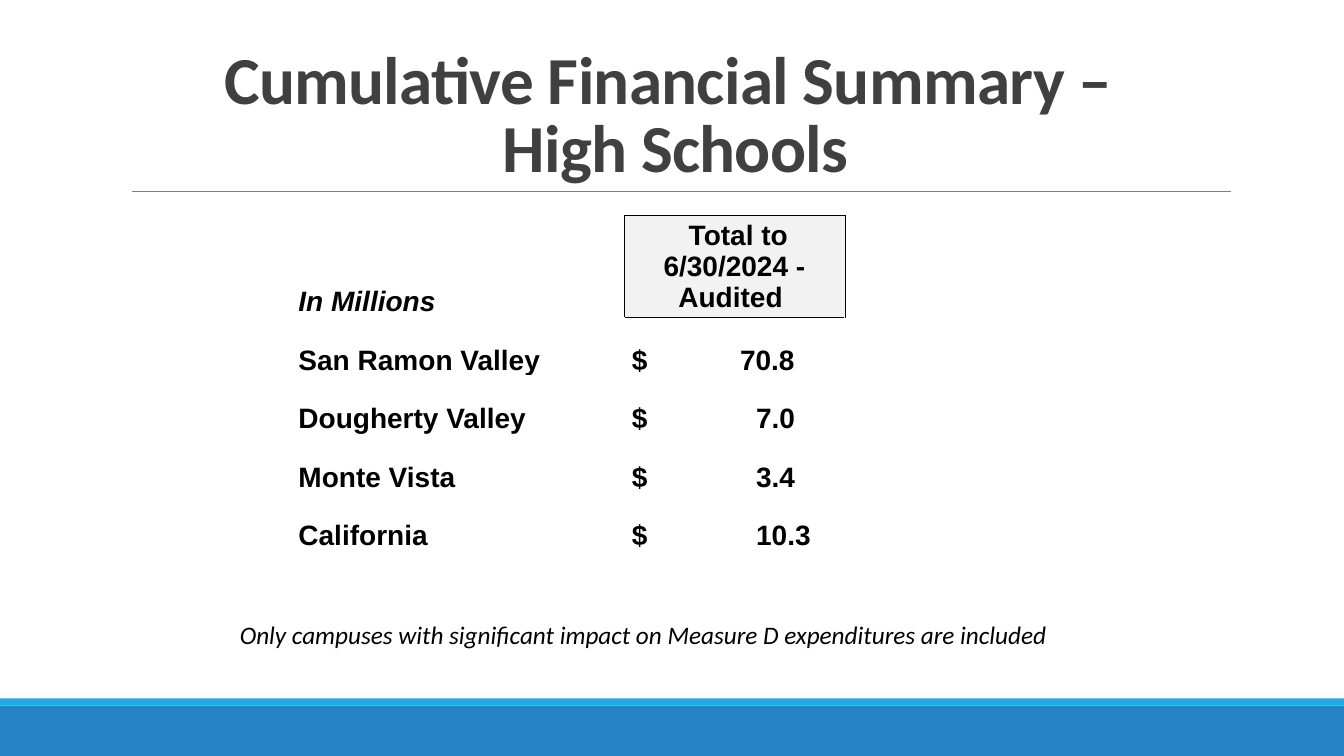
from lxml.etree import SubElement
from pptx import Presentation
from pptx.dml.color import RGBColor
from pptx.enum.shapes import MSO_CONNECTOR, MSO_SHAPE
from pptx.enum.text import MSO_ANCHOR, PP_ALIGN
from pptx.oxml import parse_xml
from pptx.oxml.ns import nsdecls, qn
from pptx.util import Inches, Pt

SCHOOLS = [
    ("San Ramon Valley", "70.8", 1.15),
    ("Dougherty Valley", "7.0", 1.31),
    ("Monte Vista", "3.4", 1.31),
    ("California", "10.3", 1.31),
]


def tint(code):
    return RGBColor.from_string(code)


def write(frame, text, size=20, font="Arial", color="000000", bold=False,
          italic=False, align=PP_ALIGN.LEFT, anchor=MSO_ANCHOR.BOTTOM):
    frame.word_wrap = True
    frame.vertical_anchor = anchor
    frame.text = text
    para = frame.paragraphs[0]
    para.alignment = align
    for run in para.runs:
        run.font.size = Pt(size)
        run.font.name = font
        run.font.color.rgb = tint(color)
        run.font.bold = bold
        run.font.italic = italic
    return para


def add_bar(slide, top, height, color):
    bar = slide.shapes.add_shape(MSO_SHAPE.RECTANGLE, Inches(0), Inches(top),
                                 Inches(13.33), Inches(height))
    bar.shadow.inherit = False
    bar.fill.solid()
    bar.fill.fore_color.rgb = tint(color)
    bar.line.fill.background()


def add_rule(slide, left, right, top):
    rule = slide.shapes.add_connector(MSO_CONNECTOR.STRAIGHT, Inches(left), Inches(top),
                                      Inches(right), Inches(top))
    rule.line.color.rgb = tint("808080")
    rule.line.width = Pt(0.5)
    SubElement(rule._element.spPr, qn("a:effectLst"))


def set_title(slide, text):
    title = slide.shapes.title
    title.left, title.top = Inches(1.2), Inches(0.31)
    title.width, title.height = Inches(11), Inches(1.59)
    para = write(title.text_frame, text, size=48, font="Calibri", color="404040",
                 bold=True, align=PP_ALIGN.CENTER)
    para.line_spacing = 0.85
    for run in para.runs:
        run.font._element.set("spc", "-50")


def add_note(slide, text):
    box = slide.shapes.add_textbox(Inches(2.28), Inches(6.09), Inches(8.45), Inches(0.4))
    write(box.text_frame, text, size=18, font="Calibri", italic=True,
          anchor=MSO_ANCHOR.TOP)


def set_edges(cell, sides):
    props = cell._tc.get_or_add_tcPr()
    for spot, side in enumerate(sides):
        props.insert(spot, parse_xml(
            f'<a:ln{side} {nsdecls("a")} w="6350"><a:solidFill>'
            f'<a:srgbClr val="000000"/></a:solidFill></a:ln{side}>'))


def set_tab(para, stop):
    tabs = SubElement(para._p.get_or_add_pPr(), qn("a:tabLst"))
    SubElement(tabs, qn("a:tab"), pos=str(Inches(stop)), algn="l")


def fill_cell(cell, text, fill=None, edges="", **style):
    cell.margin_left = cell.margin_right = cell.margin_top = cell.margin_bottom = Inches(0)
    anchor = style.pop("anchor", MSO_ANCHOR.BOTTOM)
    para = write(cell.text_frame, text, bold=True, **style)
    cell.vertical_anchor = anchor
    if fill:
        cell.fill.solid()
        cell.fill.fore_color.rgb = tint(fill)
    else:
        cell.fill.background()
    set_edges(cell, edges)
    return para


def add_totals(slide):
    frame = slide.shapes.add_table(len(SCHOOLS) + 1, 2, Inches(2.96), Inches(2.14),
                                   Inches(5.42), Inches(3.34))
    table = frame.table
    table.first_row = table.horz_banding = False
    table.columns[0].width, table.columns[1].width = Inches(3.23), Inches(2.19)
    for index, row in enumerate(table.rows):
        row.height = Inches(0.58 if index else 1.01)
    fill_cell(table.cell(0, 0), "In Millions", edges="R", italic=True)
    fill_cell(table.cell(0, 1), " Total to 6/30/2024 - Audited ", fill="F2F2F2",
              edges="LRTB", align=PP_ALIGN.CENTER, anchor=MSO_ANCHOR.MIDDLE)
    for index, (school, total, stop) in enumerate(SCHOOLS, 1):
        fill_cell(table.cell(index, 0), school)
        para = fill_cell(table.cell(index, 1), f" $\t{total}",
                         edges="T" if index == 1 else "")
        set_tab(para, stop)


def main():
    deck = Presentation()
    deck.slide_width, deck.slide_height = Inches(13.33), Inches(7.5)
    slide = deck.slides.add_slide(deck.slide_layouts[5])
    add_bar(slide, 7, 0.5, "2683C6")
    add_bar(slide, 6.93, 0.07, "1CADE4")
    add_rule(slide, 1.31, 12.21, 1.9)
    set_title(slide, "Cumulative Financial Summary – \vHigh Schools")
    add_note(slide, "Only campuses with significant impact on Measure D "
                    "expenditures are included")
    add_totals(slide)
    deck.save("out.pptx")


if __name__ == "__main__":
    main()
